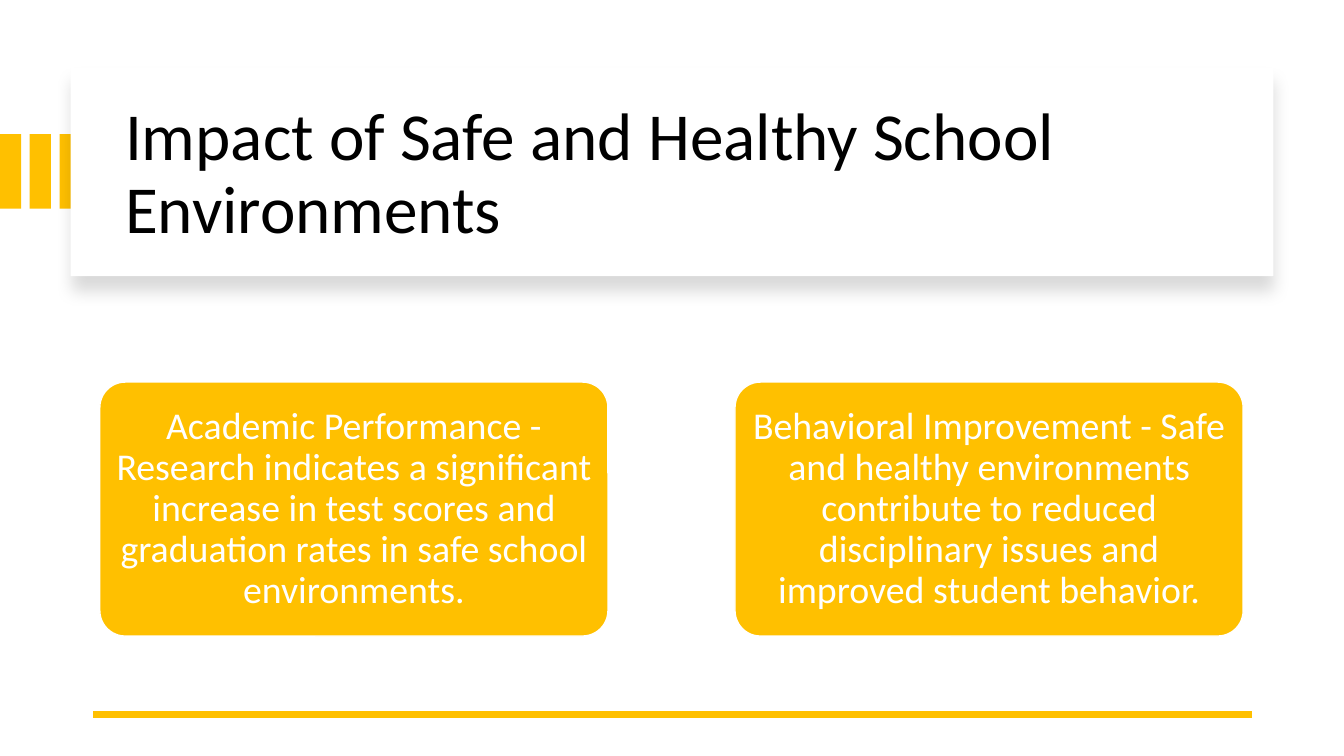
import dataclasses

import lxml.etree
import pptx
import pptx.dml.color
import pptx.enum.shapes
import pptx.enum.text
import pptx.oxml.ns
import pptx.util

Inches = pptx.util.Inches
Pt = pptx.util.Pt
SHAPE = pptx.enum.shapes.MSO_SHAPE
ALIGN = pptx.enum.text.PP_ALIGN
qn = pptx.oxml.ns.qn

COLORS = {"accent": "FFC000", "paper": "FFFFFF", "ink": "000000"}
FONT = "Calibri"


@dataclasses.dataclass
class Block:
    left: float
    top: float
    width: float
    height: float
    fill: str = "accent"
    kind: SHAPE = SHAPE.RECTANGLE
    border: str = ""
    text: str = ""


def rgb(name: str) -> pptx.dml.color.RGBColor:
    return pptx.dml.color.RGBColor.from_string(COLORS[name])


def set_text(sp, text: str, size: int, color: str, align: ALIGN, frame: dict) -> None:
    tf = sp.text_frame
    frame = {
        "word_wrap": True,
        "auto_size": pptx.enum.text.MSO_AUTO_SIZE.NONE,
        "vertical_anchor": pptx.enum.text.MSO_ANCHOR.MIDDLE,
    } | frame
    for name, value in frame.items():
        setattr(tf, name, value)
    p = tf.paragraphs[0]
    for name, value in {"alignment": align, "line_spacing": 0.9}.items():
        setattr(p, name, value)
    r = p.add_run()
    r.text = text
    for name, value in {"name": FONT, "size": Pt(size)}.items():
        setattr(r.font, name, value)
    r.font.color.rgb = rgb(color)


def draw_block(s, block: Block):
    box = map(Inches, (block.left, block.top, block.width, block.height))
    sp = s.shapes.add_shape(block.kind, *box)
    sp.shadow.inherit = False
    sp.fill.solid()
    sp.fill.fore_color.rgb = rgb(block.fill)
    if block.border:
        sp.line.color.rgb = rgb(block.border)
        sp.line.width = Pt(1)
    else:
        sp.line.fill.background()
    if block.kind == SHAPE.ROUNDED_RECTANGLE:
        sp.adjustments[0] = 0.1
    if block.text:
        margins = {"left": 0.06, "right": 0.06, "top": 0.04, "bottom": 0.04}
        frame = {f"margin_{side}": Inches(gap) for side, gap in margins.items()}
        set_text(sp, block.text, 27, "paper", ALIGN.CENTER, frame)
    return sp


def add_shadow(sp) -> None:
    effects = sp.element.spPr.find(qn("a:effectLst"))
    shadow = lxml.etree.SubElement(
        effects, qn("a:outerShdw"), blurRad=str(Pt(11)), dist=str(Pt(10)),
        dir=str(90 * 60000), algn="t", rotWithShape="0")
    color = lxml.etree.SubElement(shadow, qn("a:srgbClr"), val=COLORS["ink"])
    lxml.etree.SubElement(color, qn("a:alpha"), val="15000")


def add_rule(s, left: float, right: float, y: float) -> None:
    line = s.shapes.add_connector(
        pptx.enum.shapes.MSO_CONNECTOR.STRAIGHT,
        Inches(right), Inches(y), Inches(left), Inches(y))
    line.line.color.rgb = rgb("accent")
    line.line.width = Pt(4.5)
    lxml.etree.SubElement(line.element.spPr, qn("a:effectLst"))


def place_title(s, panel) -> None:
    title = s.shapes.title
    box = {"left": 1.14, "top": 0.89, "width": 11.13, "height": 1.7}
    for name, value in box.items():
        setattr(title, name, Inches(value))
    set_text(title, "Impact of Safe and Healthy School Environments",
             48, "ink", ALIGN.LEFT, {})
    panel.element.addnext(title.element)


def main() -> None:
    prs = pptx.Presentation()
    prs.slide_width = Inches(13.33)
    prs.slide_height = Inches(7.5)
    s = prs.slides.add_slide(prs.slide_layouts[5])
    s.background.fill.solid()
    s.background.fill.fore_color.rgb = rgb("paper")

    for i in range(3):
        draw_block(s, Block(i * 0.295, 1.33, 0.21, 0.74))

    panel = draw_block(s, Block(0.7, 0.67, 11.93, 2.07, "paper"))
    add_shadow(panel)
    place_title(s, panel)
    add_rule(s, 0.92, 12.42, 7.09)

    impacts = (
        "Academic Performance - Research indicates a significant increase in "
        "test scores and graduation rates in safe school environments.",
        "Behavioral Improvement - Safe and healthy environments contribute to "
        "reduced disciplinary issues and improved student behavior.",
    )
    for i, impact in enumerate(impacts):
        draw_block(s, Block(0.99 + i * 6.3, 3.79, 5.04, 2.52, "accent",
                            SHAPE.ROUNDED_RECTANGLE, "paper", impact))

    prs.save("out.pptx")


if __name__ == "__main__":
    main()
